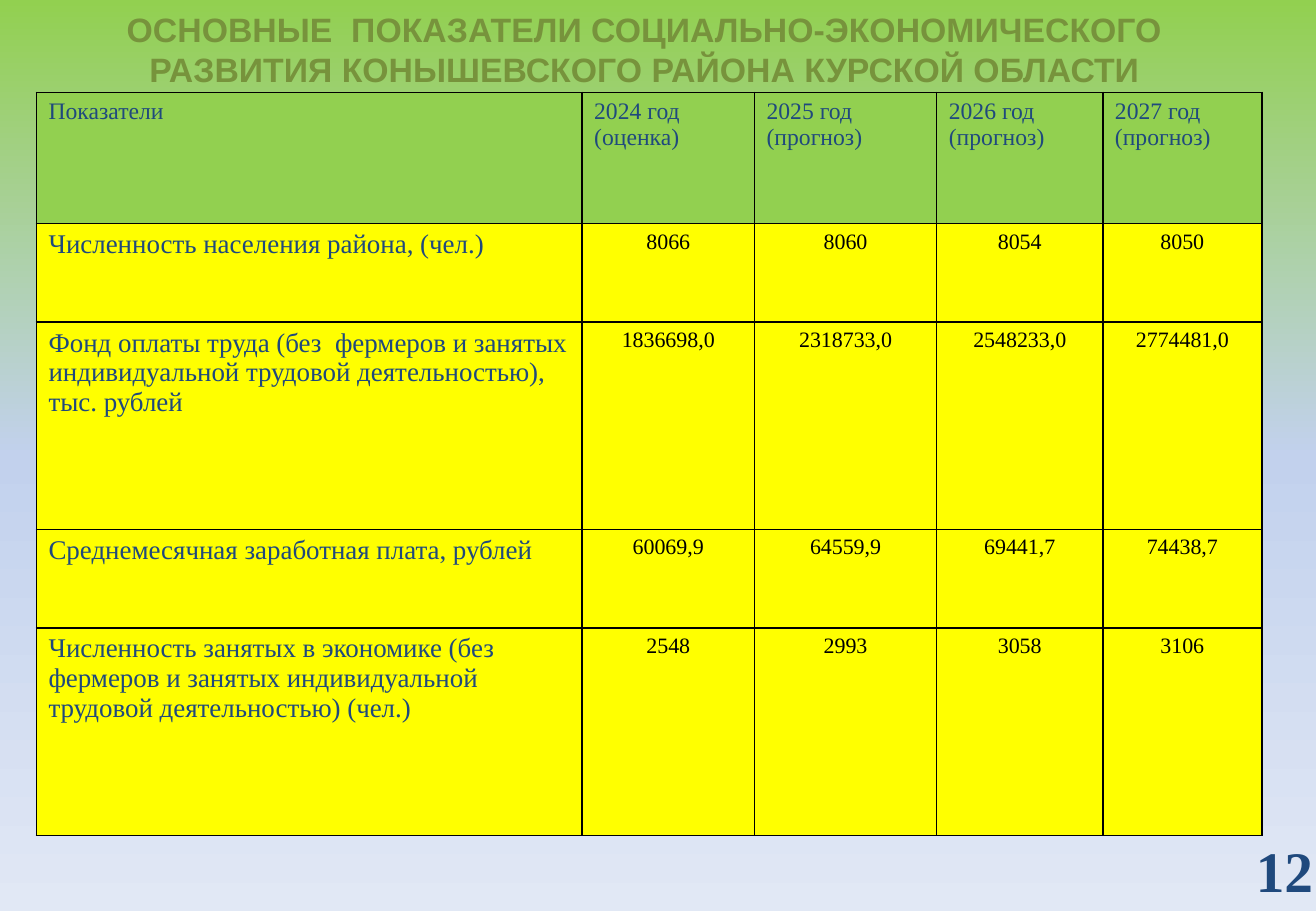
from copy import deepcopy
from dataclasses import dataclass

from lxml.etree import SubElement
from pptx import Presentation
from pptx.dml.color import RGBColor as Color
from pptx.enum.text import MSO_ANCHOR as Anchor, PP_ALIGN as Align
from pptx.oxml.ns import qn
from pptx.util import Pt


@dataclass(frozen=True)
class Theme:
    navy: str = "1F497D"
    olive: str = "77933C"
    green: str = "92D050"
    yellow: str = "FFFF00"
    black: str = "000000"
    background: tuple = ((0, "92D050"), (0.5, "C2D1ED"), (1, "E1E8F5"))
    title_font: str = "Arial"
    body_font: str = "Times New Roman"
    title_size: float = 20
    header_size: float = 14
    label_size: float = 16
    value_size: float = 13
    number_size: float = 34


THEME = Theme()

TITLE = ("ОСНОВНЫЕ  ПОКАЗАТЕЛИ СОЦИАЛЬНО-ЭКОНОМИЧЕСКОГО\v"
         "РАЗВИТИЯ КОНЫШЕВСКОГО РАЙОНА КУРСКОЙ ОБЛАСТИ")
INDICATORS = [
    ["Показатели", "2024 год\n(оценка)", "2025 год\n(прогноз)",
     "2026 год (прогноз)", "2027 год (прогноз)"],
    ["Численность населения района, (чел.)", "8066", "8060", "8054", "8050"],
    ["Фонд оплаты труда (без  фермеров и занятых индивидуальной трудовой "
     "деятельностью), тыс. рублей",
     "1836698,0", "2318733,0", "2548233,0", "2774481,0"],
    ["Среднемесячная заработная плата, рублей",
     "60069,9", "64559,9", "69441,7", "74438,7"],
    ["Численность занятых в экономике (без фермеров и занятых "
     "индивидуальной трудовой деятельностью) (чел.)",
     "2548", "2993", "3058", "3106"],
]
COLUMN_WIDTHS = [323.4, 102.2, 108, 98.5, 94.3]
ROW_HEIGHTS = [77.8, 58.3, 123.1, 58.3, 123.1]


def write_text(frame, text, *, size, color, font=THEME.body_font, bold=False,
               align=Align.LEFT, spacing=None):
    frame.text = text
    for paragraph in frame.paragraphs:
        paragraph.alignment = align
        paragraph.line_spacing = spacing
        for run in paragraph.runs:
            run.font.name = font
            run.font.size = Pt(size)
            run.font.bold = bold
            run.font.color.rgb = Color.from_string(color)


def place(shape, left, top, width, height):
    shape.left, shape.top = Pt(left), Pt(top)
    shape.width, shape.height = Pt(width), Pt(height)


def paint_background(slide):
    fill = slide.background.fill
    fill.gradient()
    fill.gradient_angle = 270
    stop_list = slide.element.find(".//" + qn("a:gsLst"))
    stop_list.append(deepcopy(stop_list[-1]))
    for stop, (position, color) in zip(fill.gradient_stops, THEME.background):
        stop.position = position
        stop.color.rgb = Color.from_string(color)


def add_title(slide, box):
    title = slide.shapes.title
    place(title, *box)
    frame = title.text_frame
    frame.word_wrap = True
    frame.vertical_anchor = Anchor.MIDDLE
    write_text(frame, TITLE, size=THEME.title_size, color=THEME.olive,
               font=THEME.title_font, bold=True, align=Align.CENTER,
               spacing=Pt(24))


def add_borders(cell, color, width):
    properties = cell._tc.get_or_add_tcPr()
    for index, side in enumerate(("a:lnL", "a:lnR", "a:lnT", "a:lnB")):
        line = properties.makeelement(qn(side), {"w": str(Pt(width))})
        SubElement(SubElement(line, qn("a:solidFill")), qn("a:srgbClr"), val=color)
        properties.insert(index, line)


def add_indicator_table(slide, box):
    table = slide.shapes.add_table(len(INDICATORS), len(COLUMN_WIDTHS),
                                   *map(Pt, box)).table
    for column, width in zip(table.columns, COLUMN_WIDTHS):
        column.width = Pt(width)
    for row, height in zip(table.rows, ROW_HEIGHTS):
        row.height = Pt(height)

    header = dict(size=THEME.header_size, color=THEME.navy)
    label = dict(size=THEME.label_size, color=THEME.navy)
    value = dict(size=THEME.value_size, color=THEME.black, align=Align.CENTER)
    for row_index, texts in enumerate(INDICATORS):
        for column_index, text in enumerate(texts):
            cell = table.cell(row_index, column_index)
            cell.fill.solid()
            cell.fill.fore_color.rgb = Color.from_string(
                THEME.yellow if row_index else THEME.green)
            style = header if row_index == 0 else value if column_index else label
            write_text(cell.text_frame, text, **style)
            add_borders(cell, THEME.black, 1)


def add_page_number(slide, box):
    frame = slide.shapes.add_textbox(*map(Pt, box)).text_frame
    frame.word_wrap = False
    write_text(frame, "12", size=THEME.number_size, color=THEME.navy, bold=True)


def main():
    presentation = Presentation()
    presentation.slide_width, presentation.slide_height = Pt(780), Pt(540)
    slide = presentation.slides.add_slide(presentation.slide_layouts[5])

    paint_background(slide)
    add_title(slide, (0, 0, 764, 58))
    add_indicator_table(slide, (21.6, 54.7, sum(COLUMN_WIDTHS), sum(ROW_HEIGHTS)))
    add_page_number(slide, (737.3, 491.8, 49, 48.2))

    presentation.save("out.pptx")


if __name__ == "__main__":
    main()
